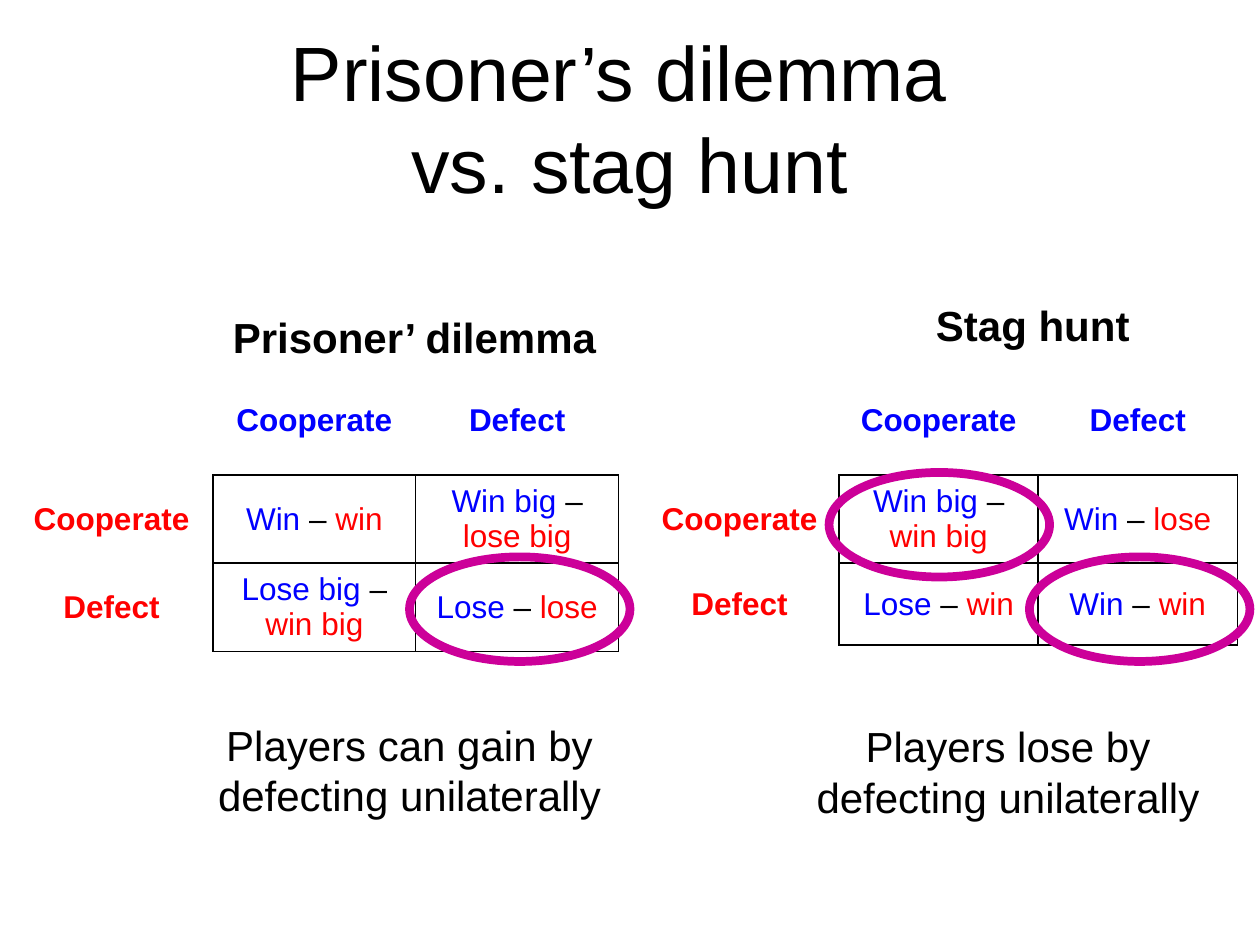
import pptx
import pptx.dml.color
import pptx.enum.shapes
import pptx.enum.text
import pptx.oxml
import pptx.oxml.ns
import pptx.util

Inches = pptx.util.Inches
Pt = pptx.util.Pt
RGBColor = pptx.dml.color.RGBColor
CENTER = pptx.enum.text.PP_ALIGN.CENTER
MIDDLE = pptx.enum.text.MSO_ANCHOR.MIDDLE

BLACK = RGBColor(0, 0, 0)
WHITE = RGBColor(255, 255, 255)
BLUE = RGBColor(0, 0, 255)
RED = RGBColor(255, 0, 0)
MAGENTA = RGBColor(0xCC, 0x00, 0x99)
NO_STYLE = "{2D5ABB26-0587-4C30-8999-92F81FD0307C}"

TITLE = "Prisoner’s dilemma \vvs. stag hunt"
MOVES = ["Cooperate", "Defect"]
TABLE_TOP = 2.91
ROW_HEIGHTS = [0.86, 0.65, 0.65]
ELLIPSE_SIZE = (1.75, 0.83)

# Payoffs are (column player, row player), one list per row.
GAMES = [
    {
        "heading": "Prisoner’ dilemma", "heading_box": (1.75, 2.42, 3.11, 0.5),
        "table_left": 0.08, "column_width": 1.61,
        "payoffs": [[("Win", "win"), ("Win big", "lose big")],
                    [("Lose big", "win big"), ("Lose", "lose")]],
        "equilibria": [(3.25, 4.42)],
        "remark": "Players can gain by defecting unilaterally",
        "remark_box": (1.5, 5.66, 3.5, 0.91),
    },
    {
        "heading": "Stag hunt", "heading_box": (7.33, 2.33, 1.75, 0.5),
        "table_left": 5.08, "column_width": 1.58,
        "payoffs": [[("Win big", "win big"), ("Win", "lose")],
                    [("Lose", "win"), ("Win", "win")]],
        "equilibria": [(6.58, 3.75), (8.17, 4.42)],
        "remark": "Players lose by defecting unilaterally",
        "remark_box": (6.25, 5.67, 3.5, 0.91),
    },
]


def set_font(paragraph, size, bold=False):
    paragraph.font.name = "Arial"
    paragraph.font.size = Pt(size)
    paragraph.font.bold = bold


def add_text(slide, box, text, size, bold=False, wrap=True, alignment=CENTER):
    text_box = slide.shapes.add_textbox(*map(Inches, box))
    frame = text_box.text_frame
    frame.word_wrap = wrap
    frame.text = text
    paragraph = frame.paragraphs[0]
    paragraph.alignment = alignment
    set_font(paragraph, size, bold)
    paragraph.font.color.rgb = BLACK
    return frame


def fill_cell(cell, runs, bold, border_sides):
    """Write coloured runs and draw 1 pt borders on the sides given, from L, R, T, B."""
    cell.vertical_anchor = MIDDLE
    properties = cell._tc.get_or_add_tcPr()
    for side in border_sides:
        properties.append(pptx.oxml.parse_xml(
            f'<a:ln{side} {pptx.oxml.ns.nsdecls("a")} w="12700"><a:solidFill>'
            f'<a:srgbClr val="{BLACK}"/></a:solidFill></a:ln{side}>'))
    cell.fill.solid()
    cell.fill.fore_color.rgb = WHITE
    paragraph = cell.text_frame.paragraphs[0]
    paragraph.alignment = CENTER
    for text, color in runs:
        run = paragraph.add_run()
        run.text = text
        run.font.color.rgb = color
    set_font(paragraph, 18, bold)


def add_payoff_table(slide, game):
    width = game["column_width"]
    frame = slide.shapes.add_table(
        3, 3, Inches(game["table_left"]), Inches(TABLE_TOP),
        Inches(3 * width), Inches(sum(ROW_HEIGHTS)))
    table = frame.table
    table.first_row = table.horz_banding = False
    table._tbl.tblPr.find(pptx.oxml.ns.qn("a:tableStyleId")).text = NO_STYLE
    for column in table.columns:
        column.width = Inches(width)
    for row, height in zip(table.rows, ROW_HEIGHTS):
        row.height = Inches(height)

    fill_cell(table.cell(0, 0), [], False, "")
    for index, move in enumerate(MOVES, start=1):
        fill_cell(table.cell(0, index), [(move, BLUE)], True, "B")
        fill_cell(table.cell(index, 0), [(move, RED)], True, "R")
    for row, payoffs in enumerate(game["payoffs"], start=1):
        for column, (blue_payoff, red_payoff) in enumerate(payoffs, start=1):
            runs = [(blue_payoff + " ", BLUE), ("– ", BLACK), (red_payoff, RED)]
            fill_cell(table.cell(row, column), runs, False, "LRTB")


def add_equilibrium_ring(slide, position):
    ring = slide.shapes.add_shape(
        pptx.enum.shapes.MSO_SHAPE.OVAL, *map(Inches, position + ELLIPSE_SIZE))
    ring.shadow.inherit = False
    ring.fill.background()
    ring.line.color.rgb = MAGENTA
    ring.line.width = Pt(5)


def main():
    presentation = pptx.Presentation()
    presentation.slide_width = Inches(10)
    presentation.slide_height = Inches(7.5)
    slide = presentation.slides.add_slide(presentation.slide_layouts[6])

    title = add_text(slide, (0.5, 0.3, 9, 1.25), TITLE, 44)
    title.vertical_anchor = MIDDLE
    for game in GAMES:
        add_payoff_table(slide, game)
        add_text(slide, game["heading_box"], game["heading"], 24, bold=True,
                 wrap=False, alignment=pptx.enum.text.PP_ALIGN.LEFT)
        for position in game["equilibria"]:
            add_equilibrium_ring(slide, position)
        add_text(slide, game["remark_box"], game["remark"], 24)

    presentation.save("out.pptx")


if __name__ == "__main__":
    main()
